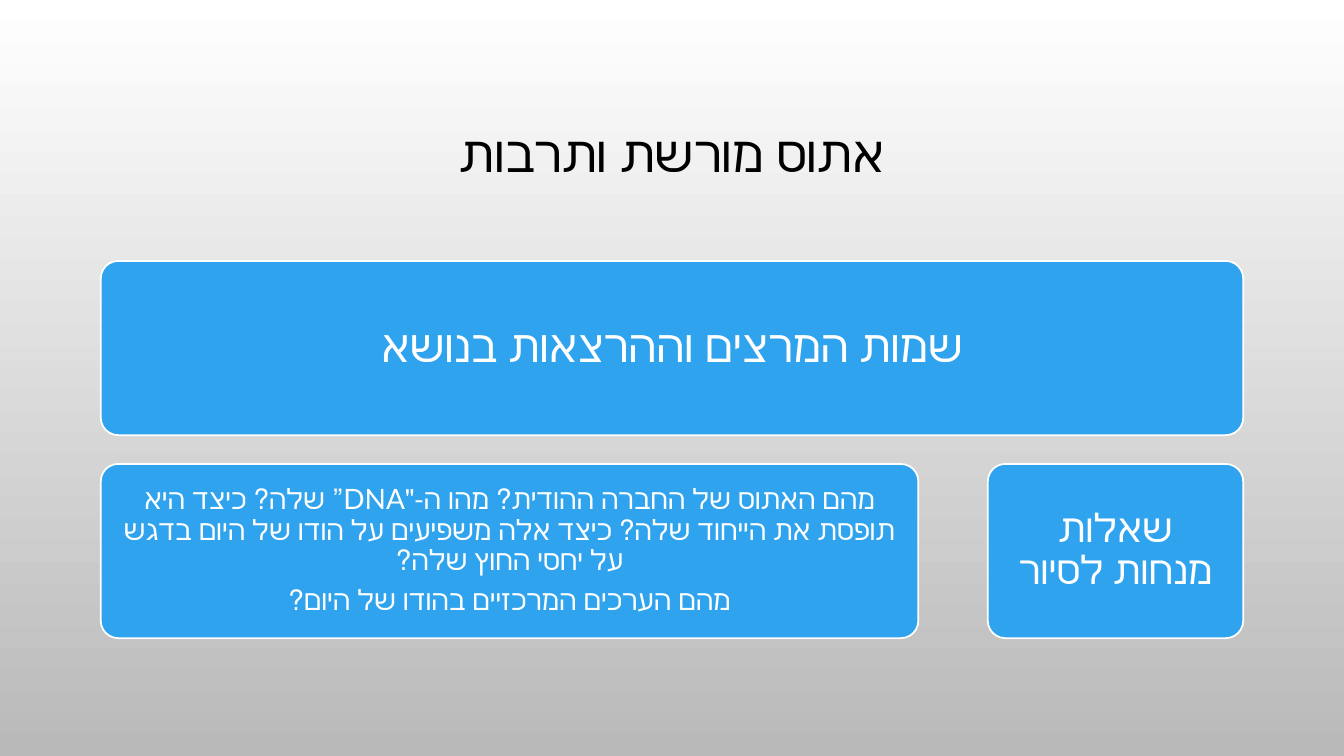
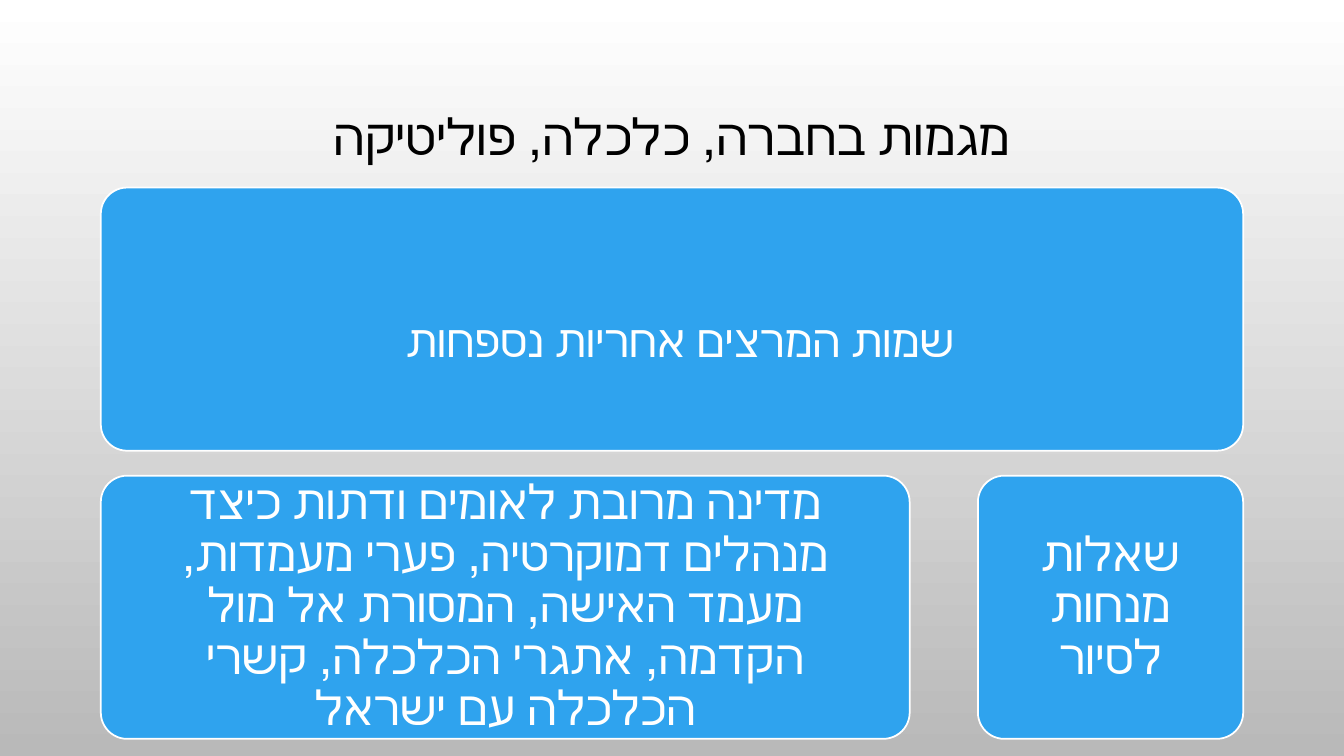
from dataclasses import dataclass

from pptx import Presentation
from pptx.dml.color import RGBColor
from pptx.enum.shapes import MSO_SHAPE
from pptx.enum.text import MSO_ANCHOR, PP_ALIGN
from pptx.util import Pt

ROUND = MSO_SHAPE.ROUNDED_RECTANGLE
MIDDLE = MSO_ANCHOR.MIDDLE
CENTER = PP_ALIGN.CENTER
LEFT = PP_ALIGN.LEFT


@dataclass(frozen=True)
class Theme:
    ink: RGBColor = RGBColor(0, 0, 0)
    white: RGBColor = RGBColor(255, 255, 255)
    gray: RGBColor = RGBColor(0xB9, 0xB9, 0xB9)
    blue: RGBColor = RGBColor(0x2F, 0xA3, 0xEE)
    base: str = "Calibri"
    alt: str = "Lato"
    title: int = 36
    large: int = 34
    head: int = 32
    side: int = 28
    body: int = 20
    border: float = 1.25
    lead: float = 0.9
    after: float = 0.35


THEME = Theme()
PAGE_W, PAGE_H = 960, 540
EDGE = 72
WIDE = PAGE_W - 2 * EDGE


def style(run, size, color, face):
    """Set size, colour and face of a run of Hebrew text."""
    font = run.font
    font.size = Pt(size)
    font.color.rgb = color
    font.name = face
    run._r.get_or_add_rPr().set("lang", "he-IL")


def write(frame, paras, size, color, face=THEME.base, after=THEME.after):
    """Fill a frame with centred right-to-left paragraphs of (text, face) runs."""
    frame.word_wrap = True
    frame.vertical_anchor = MIDDLE
    for i, parts in enumerate(paras):
        para = frame.add_paragraph() if i else frame.paragraphs[0]
        para._p.get_or_add_pPr().set("rtl", "1")
        para.alignment = CENTER
        para.line_spacing = THEME.lead
        para.space_after = Pt(size * after)
        if isinstance(parts, str):
            parts = [(parts, face)]
        for text, name in parts:
            run = para.add_run()
            run.text = text
            style(run, size, color, name)


def add_page(deck, title, top):
    """Add a slide with the shared background and title."""
    slide = deck.slides.add_slide(deck.slide_layouts[6])
    fill = slide.background.fill
    fill.gradient()
    fill.gradient_angle = 270
    for stop, pos, color in zip(fill.gradient_stops, (0, 1), (THEME.white, THEME.gray)):
        stop.position = pos
        stop.color.rgb = color
    box = slide.shapes.add_textbox(Pt(EDGE), Pt(top), Pt(WIDE), Pt(126))
    write(box.text_frame, [title], THEME.title, THEME.ink, after=0)
    return slide


def add_card(slide, left, top, width, height):
    """Add a blue rounded card and return its text frame."""
    card = slide.shapes.add_shape(ROUND, Pt(left), Pt(top), Pt(width), Pt(height))
    card.adjustments[0] = 0.1
    card.shadow.inherit = False
    card.fill.solid()
    card.fill.fore_color.rgb = THEME.blue
    card.line.color.rgb = THEME.white
    card.line.width = Pt(THEME.border)
    return card.text_frame


def pad(frame, inset):
    frame.margin_left = frame.margin_right = Pt(inset)
    frame.margin_top = frame.margin_bottom = Pt(inset)


def add_cards(slide, top, height, gap, main, side):
    """Lay out a banner over a main card and a side card."""
    low = top + height + gap
    right = PAGE_W - EDGE - side
    return (
        add_card(slide, EDGE, top, WIDE, height),
        add_card(slide, EDGE, low, main, height),
        add_card(slide, right, low, side, height),
    )


def add_label(slide, text, left, top, width, height):
    """Add a free left-aligned heading."""
    frame = slide.shapes.add_textbox(Pt(left), Pt(top), Pt(width), Pt(height)).text_frame
    frame.word_wrap = True
    frame.text = text
    para = frame.paragraphs[0]
    para.alignment = LEFT
    style(para.runs[0], THEME.head, THEME.white, THEME.base)


def ethos(deck):
    slide = add_page(deck, "אתוס מורשת ותרבות", 48.6)
    banner, main, side = add_cards(slide, 186.4, 124.4, 20.6, 584, 182.4)
    asks = [
        [
            ("מהם האתוס של החברה ההודית? מהו ה-", THEME.base),
            ("\"DNA”", THEME.alt),
            (" שלה? כיצד היא תופסת את הייחוד שלה? כיצד אלה משפיעים על "
             "הודו של היום בדגש על יחסי החוץ שלה?", THEME.base),
        ],
        "מהם הערכים המרכזיים בהודו של היום?",
    ]
    cards = (
        (banner, ["שמות המרצים וההרצאות בנושא"], THEME.head, 9.5),
        (main, asks, THEME.body, 6),
        (side, ["שאלות מנחות לסיור"], THEME.side, 8.5),
    )
    for frame, paras, size, inset in cards:
        pad(frame, inset)
        write(frame, paras, size, THEME.white)


def trends(deck):
    slide = add_page(deck, "מגמות בחברה, כלכלה, פוליטיקה", 36.6)
    _, main, side = add_cards(slide, 134, 188, 17.8, 577.8, 189.5)
    topics = ("מדינה מרובת לאומים ודתות כיצד מנהלים דמוקרטיה, פערי מעמדות, "
              "מעמד האישה, המסורת אל מול הקדמה, אתגרי הכלכלה, "
              "קשרי הכלכלה עם ישראל")
    for frame, text, inset in ((main, topics, 16), (side, "שאלות מנחות לסיור", 10)):
        pad(frame, inset)
        write(frame, [text], THEME.large, THEME.white, THEME.alt)
    add_label(slide, "שמות המרצים אחריות נספחות", 283, 220, 478, 46)


def main():
    deck = Presentation()
    deck.slide_width, deck.slide_height = Pt(PAGE_W), Pt(PAGE_H)
    ethos(deck)
    trends(deck)
    deck.save("out.pptx")


if __name__ == "__main__":
    main()
